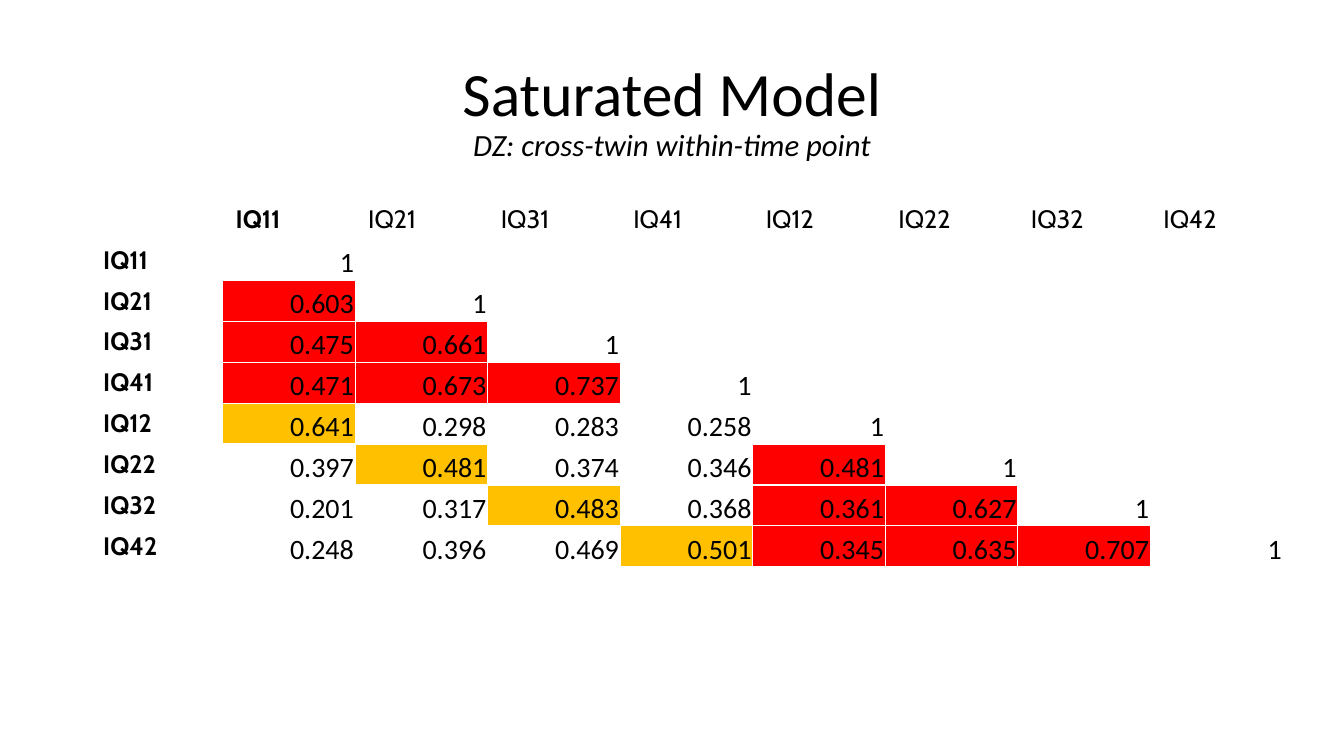
from lxml.etree import SubElement
from pptx import Presentation
from pptx.dml.color import RGBColor
from pptx.enum.text import MSO_ANCHOR, PP_ALIGN
from pptx.oxml.ns import qn
from pptx.util import Cm, Pt

# Content
TITLE = "Saturated Model"
SUBTITLE = "DZ: cross-twin within-time point"
LABELS = ["IQ11", "IQ21", "IQ31", "IQ41", "IQ12", "IQ22", "IQ32", "IQ42"]
CORRELATIONS = [
    ["1"],
    ["0.603", "1"],
    ["0.475", "0.661", "1"],
    ["0.471", "0.673", "0.737", "1"],
    ["0.641", "0.298", "0.283", "0.258", "1"],
    ["0.397", "0.481", "0.374", "0.346", "0.481", "1"],
    ["0.201", "0.317", "0.483", "0.368", "0.361", "0.627", "1"],
    ["0.248", "0.396", "0.469", "0.501", "0.345", "0.635", "0.707", "1"],
]
TIME_POINTS = 4

BLACK = RGBColor(0x00, 0x00, 0x00)
WHITE = RGBColor(0xFF, 0xFF, 0xFF)
RED = RGBColor(0xFF, 0x00, 0x00)
AMBER = RGBColor(0xFF, 0xC0, 0x00)

LABEL_MARGINS = (0.33, 0.13, 0.33, 0.13)
VALUE_MARGINS = (0.03, 0.03, 0.03, 0)


def add_run(p, text, font, size, bold=False, italic=False):
    r = p.add_run()
    r.text = text
    r.font.name = font
    r.font.size = Pt(size)
    r.font.bold = bold
    r.font.italic = italic
    r.font.color.rgb = BLACK


def set_borders(cell, bottom):
    tc_pr = cell._tc.get_or_add_tcPr()
    for side, width in (("L", 1), ("R", 1), ("T", 1), ("B", bottom)):
        ln = SubElement(tc_pr, qn(f"a:ln{side}"), w=str(Pt(width)))
        fill = SubElement(ln, qn("a:solidFill"))
        SubElement(fill, qn("a:srgbClr"), val=str(WHITE))


def set_margins(cell, margins):
    (cell.margin_left, cell.margin_top,
     cell.margin_right, cell.margin_bottom) = [Cm(m) for m in margins]


def value_color(i, j):
    """Red within one twin, amber across twins at the same time point."""
    if i > j and i // TIME_POINTS == j // TIME_POINTS:
        return RED
    return AMBER if i - j == TIME_POINTS else None


prs = Presentation()
prs.slide_width, prs.slide_height = Cm(33.87), Cm(19.05)
s = prs.slides.add_slide(prs.slide_layouts[6])

# Title
sp = s.shapes.add_textbox(Cm(2.33), Cm(1.01), Cm(29.21), Cm(3.68))
tf = sp.text_frame
tf.word_wrap = True
tf.vertical_anchor = MSO_ANCHOR.MIDDLE
p = tf.paragraphs[0]
p.alignment = PP_ALIGN.CENTER
p.line_spacing = 0.9
add_run(p, TITLE, "Calibri", 44)
p.add_line_break()
add_run(p, SUBTITLE, "Calibri", 22, italic=True)

# Correlation table
n = len(LABELS) + 1
table = s.shapes.add_table(n, n, Cm(2.27), Cm(5.01), Cm(30.1), Cm(9.27)).table
table.first_row = table.horz_banding = False
for row in table.rows:
    row.height = Cm(1.03)
for column in table.columns:
    column.width = Cm(3.34)

for row in range(n):
    for col in range(n):
        cell = table.cell(row, col)
        set_borders(cell, 3 if row == 0 else 1)
        cell.fill.background()
        p = cell.text_frame.paragraphs[0]
        i, j = row - 1, col - 1
        if row == 0 or col == 0:
            set_margins(cell, LABEL_MARGINS)
            if row != col:
                add_run(p, LABELS[max(i, j)], "Cabin", 18, bold=col < 2)
            continue
        set_margins(cell, VALUE_MARGINS)
        if j > i:
            continue
        cell.vertical_anchor = MSO_ANCHOR.BOTTOM
        p.alignment = PP_ALIGN.RIGHT
        add_run(p, CORRELATIONS[i][j], "Calibri", 20)
        color = value_color(i, j)
        if color is not None:
            cell.fill.solid()
            cell.fill.fore_color.rgb = color

prs.save("out.pptx")
